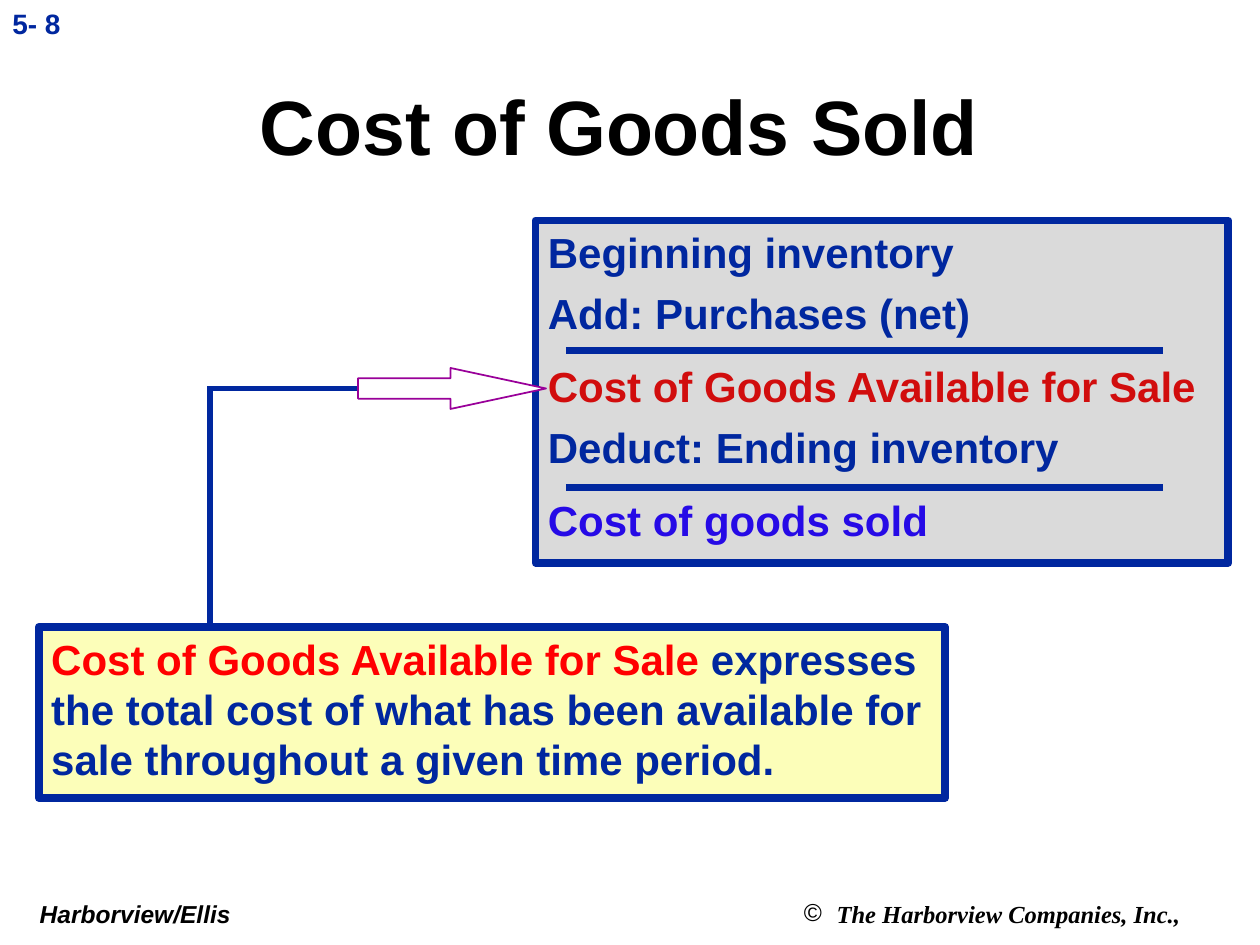
from collections import namedtuple
from lxml.etree import SubElement
from pptx import Presentation
from pptx.dml.color import RGBColor
from pptx.enum.shapes import MSO_CONNECTOR, MSO_SHAPE
from pptx.enum.text import MSO_ANCHOR, PP_ALIGN
from pptx.oxml.ns import qn
from pptx.util import Inches, Pt

COLS, ROWS = 120, 90
WIDE, HIGH = Inches(10), Inches(7.5)
HUES = {
    "navy": "00279F", "black": "000000", "white": "FFFFFF", "grey": "DADADA",
    "cream": "FCFEB9", "brick": "D10D0D", "red": "FF0000", "blue": "260AE6",
    "plum": "990099",
}
Box = namedtuple("Box", "x y w h")


def hue(name):
    return RGBColor.from_string(HUES[name])


def across(n):
    return round(WIDE * n / COLS)


def down(n):
    return round(HIGH * n / ROWS)


def place(box):
    return across(box.x), down(box.y), across(box.w), down(box.h)


def write(frame, paras, size=24, font="Arial", color="navy", italic=False,
          align=PP_ALIGN.LEFT, anchor=MSO_ANCHOR.TOP):
    """Fill a frame; each paragraph is (space before, [(text, colour or None)])."""
    frame.word_wrap = True
    frame.vertical_anchor = anchor
    for i, (gap, runs) in enumerate(paras):
        para = frame.paragraphs[0] if i == 0 else frame.add_paragraph()
        para.alignment = align
        para.space_before = Pt(gap)
        for text, tint in runs:
            run = para.add_run()
            run.text = text
            run.font.name, run.font.size = font, Pt(size)
            run.font.bold, run.font.italic = True, italic
            run.font.color.rgb = hue(tint or color)
    return frame


def label(slide, box, text, **style):
    frame = slide.shapes.add_textbox(*place(box)).text_frame
    return write(frame, [(0, [(text, None)])], **style)


def panel(slide, box, fill, edge="navy", width=4.5, kind=MSO_SHAPE.RECTANGLE):
    shape = slide.shapes.add_shape(kind, *place(box))
    shape.shadow.inherit = False
    shape.fill.solid()
    shape.fill.fore_color.rgb = hue(fill)
    shape.line.color.rgb = hue(edge)
    shape.line.width = Pt(width)
    return shape


def rule(slide, x1, y1, x2, y2, width):
    line = slide.shapes.add_connector(
        MSO_CONNECTOR.STRAIGHT, across(x1), down(y1), across(x2), down(y2))
    line.line.color.rgb = hue("navy")
    line.line.width = Pt(width)
    SubElement(line._element.spPr, qn("a:effectLst"))


def bullet(para, mark, size, indent):
    props = para._p.get_or_add_pPr()
    props.set("marL", str(indent))
    props.set("indent", str(-indent))
    SubElement(props, qn("a:buSzPts"), val=str(size * 100))
    SubElement(props, qn("a:buFont"), typeface="Arial")
    SubElement(props, qn("a:buChar"), char=mark)


def footer(slide, box):
    label(slide, Box(box.x + 2.6, box.y, 26, box.h), "Harborview/Ellis",
          size=14, color="black", italic=True)
    frame = label(slide, Box(box.x + 70, box.y, 49, box.h),
                  "The Harborview Companies, Inc.,", size=14, color="black",
                  font="Times New Roman", italic=True, align=PP_ALIGN.CENTER)
    bullet(frame.paragraphs[0], "©", 12, Inches(0.26))


def ledger(slide, box):
    """Cost of goods sold schedule, ruled above each total."""
    rows = [
        (0, "Beginning inventory", "navy"),
        (6, "Add: Purchases (net)", "navy"),
        (13, "Cost of Goods Available for Sale", "brick"),
        (6, "Deduct: Ending inventory", "navy"),
        (13, "Cost of goods sold", "blue"),
    ]
    shape = panel(slide, box, "grey")
    write(shape.text_frame, [(gap, [(text, tint)]) for gap, text, tint in rows])
    for share in (0.38, 0.78):
        y = box.y + share * box.h
        rule(slide, box.x + 2.9, y, box.x + 59.8, y, 4)


def callout(slide, box):
    shape = panel(slide, box, "cream")
    write(shape.text_frame, [(0, [
        ("Cost of Goods Available for Sale", "red"),
        (" expresses the total cost of what has been available for sale "
         "throughout a given time period.", None)])])


def link(slide, box):
    """Elbow from the callout up to the ledger, ending in a block arrow."""
    rule(slide, box.x, box.y + box.h, box.x, box.y - 0.2, 3)
    rule(slide, box.x + 0.3, box.y, box.x + box.w, box.y, 3)
    arrow = panel(slide, Box(box.x + 14.1, box.y - 1.95, 17.9, 3.9), "white",
                  "plum", 1, MSO_SHAPE.RIGHT_ARROW)
    arrow.adjustments[0], arrow.adjustments[1] = 0.5, 2.33


def main():
    deck = Presentation()
    deck.slide_width, deck.slide_height = WIDE, HIGH
    slide = deck.slides.add_slide(deck.slide_layouts[6])
    slide.background.fill.solid()
    slide.background.fill.fore_color.rgb = hue("white")
    footer(slide, Box(0, 85, COLS, 4))
    label(slide, Box(0, 0, 10, 6), "5- 8", size=16)
    label(slide, Box(7, 4.6, 104, 14.5), "Cost of Goods Sold", size=44,
          color="black", align=PP_ALIGN.CENTER, anchor=MSO_ANCHOR.MIDDLE)
    ledger(slide, Box(51, 21, 66, 32.6))
    callout(slide, Box(3.7, 59.7, 86.3, 16.3))
    link(slide, Box(20, 37, 30.8, 22.3))
    deck.save("out.pptx")


if __name__ == "__main__":
    main()
